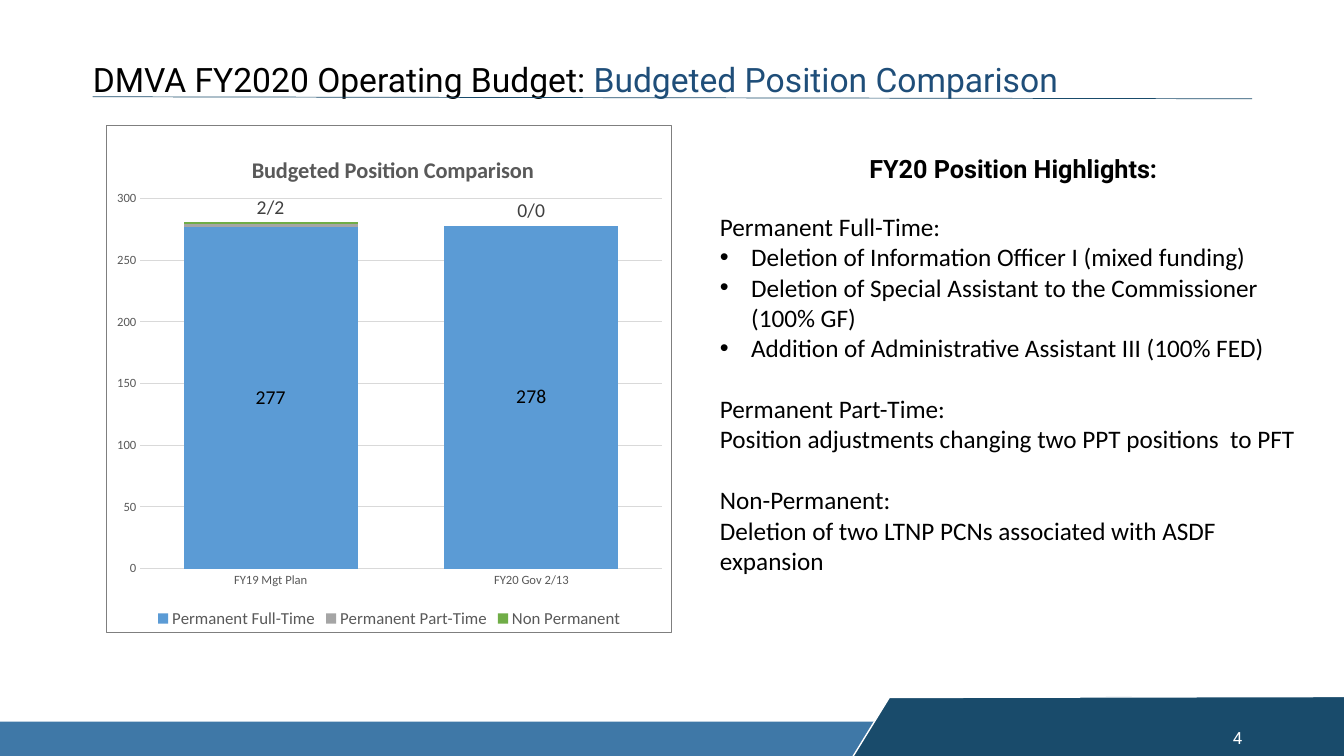
from lxml import etree
from pptx import Presentation
from pptx.chart.data import CategoryChartData
from pptx.dml.color import RGBColor
from pptx.enum.chart import XL_CHART_TYPE as ChartType, XL_LABEL_POSITION as LabelPosition
from pptx.enum.chart import XL_LEGEND_POSITION as LegendPosition, XL_TICK_MARK as TickMark
from pptx.enum.shapes import MSO_CONNECTOR as Connector, MSO_SHAPE as Shape
from pptx.enum.text import MSO_ANCHOR as Anchor, MSO_AUTO_SIZE as AutoSize, PP_ALIGN as Align
from pptx.oxml import parse_xml
from pptx.oxml.ns import nsdecls, qn
from pptx.util import Inches, Pt


def color(value):
    return RGBColor.from_string(value)


def manual_layout(inner=False, **sides):
    parts = '<c:layoutTarget val="inner"/>' if inner else ""
    if inner or "edge" in sides:
        parts += '<c:xMode val="edge"/><c:yMode val="edge"/>'
    sides.pop("edge", None)
    parts += "".join(f'<c:{side} val="{size}"/>' for side, size in sides.items())
    return parse_xml(f'<c:layout {nsdecls("c")}><c:manualLayout>{parts}</c:manualLayout></c:layout>')


def place(parent, layout, after):
    for old in parent.findall(qn("c:layout")):
        parent.remove(old)
    if after is None:
        parent.insert(0, layout)
    else:
        parent.find(qn(after)).addnext(layout)


class BudgetPage:
    heading_font = "Roboto"
    text_font = "Calibri"
    navy = "194B6B"
    blue = "3F78A7"
    accent = "1F4E79"
    gray = "595959"
    grid = "D9D9D9"
    border = "7F7F7F"

    def __init__(self, deck):
        self.page = deck.slides.add_slide(deck.slide_layouts[1])
        self.shapes = self.page.shapes

    def style(self, font, size, tone, name=None, bold=False):
        font.name = name or self.text_font
        font.size = Pt(size)
        font.bold = bold
        font.color.rgb = color(tone)

    def span(self, para, text, size, tone, name=None, bold=False):
        run = para.add_run()
        run.text = text
        self.style(run.font, size, tone, name, bold)

    def frame(self, box, left, top, width, height, inset=0.1):
        box.left, box.top = Inches(left), Inches(top)
        box.width, box.height = Inches(width), Inches(height)
        frame = box.text_frame
        frame.word_wrap = True
        frame.auto_size = AutoSize.NONE
        frame.vertical_anchor = Anchor.TOP
        frame.margin_left, frame.margin_right = Inches(inset), Inches(0.1)
        frame.margin_top = frame.margin_bottom = Inches(0.05)
        return frame

    def band(self, left, top, width, height):
        box = self.shapes.add_shape(Shape.RECTANGLE, Inches(left), Inches(top), Inches(width), Inches(height))
        box.shadow.inherit = False
        box.fill.solid()
        box.fill.fore_color.rgb = color(self.blue)
        box.line.fill.background()

    def corner(self, points):
        start, *rest = [(Inches(x), Inches(y)) for x, y in points]
        builder = self.shapes.build_freeform(*start)
        builder.add_line_segments(rest, close=True)
        box = builder.convert_to_shape()
        box.shadow.inherit = False
        box.fill.solid()
        box.fill.fore_color.rgb = color(self.navy)
        box.line.color.rgb = color("FFFFFF")
        box.line.width = Pt(1)

    def rule(self, *ends):
        line = self.shapes.add_connector(Connector.STRAIGHT, *[Inches(end) for end in ends])
        line.line.color.rgb = color(self.navy)
        line.line.width = Pt(0.5)
        etree.SubElement(line._element.spPr, qn("a:effectLst"))

    def title(self, *spans):
        para = self.frame(self.shapes.title, 0.92, 0.58, 11.5, 0.48, inset=0).paragraphs[0]
        para.alignment = Align.LEFT
        para.line_spacing = 0.9
        for text, tone in spans:
            self.span(para, text, 24, tone, self.heading_font)

    def number(self, text):
        box = self.shapes.add_textbox(0, 0, 0, 0)
        para = self.frame(box, 9.42, 7.17, 3, 0.33).paragraphs[0]
        para.alignment = Align.RIGHT
        self.span(para, text, 12, "FFFFFF", self.heading_font)

    def highlights(self, heading, sections):
        frame = self.frame(self.page.placeholders[1], 7.04, 1.47, 6.02, 4.58)
        para = frame.paragraphs[0]
        self.list_item(para, False, 0)
        para.alignment = Align.CENTER
        self.span(para, heading, 18, "000000", self.heading_font, True)
        for gap, label, lines, bulleted in sections:
            para = frame.add_paragraph()
            self.list_item(para, False, gap)
            self.span(para, label, 18, "000000")
            for text in lines:
                para = frame.add_paragraph()
                self.list_item(para, bulleted, 0)
                self.span(para, text, 18, "000000")

    def list_item(self, para, bulleted, gap):
        indent = Inches(0.31) if bulleted else 0
        props = para._p.get_or_add_pPr()
        props.set("marL", str(indent))
        props.set("indent", str(-indent))
        if bulleted:
            etree.SubElement(props, qn("a:buFont"), typeface="Arial")
            etree.SubElement(props, qn("a:buChar"), char="•")
        else:
            etree.SubElement(props, qn("a:buNone"))
        para.space_before = Pt(gap)
        para.space_after = Pt(0)
        para.alignment = Align.LEFT

    def chart(self, heading, categories, series, tags):
        data = CategoryChartData()
        data.categories = categories
        for name, values, tone in series:
            data.add_series(name, values)
        place_on_page = [Inches(side) for side in (1.05, 1.24, 5.62, 5.04)]
        chart = self.shapes.add_chart(ChartType.COLUMN_STACKED, *place_on_page, data).chart
        self.style(chart.font, 10, "000000")
        self.chart_frame(chart, heading)
        self.axes(chart)
        plot = chart.plots[0]
        plot.gap_width, plot.overlap = 50, 100
        plot.vary_by_categories = False
        for bars, (name, values, tone) in zip(plot.series, series):
            bars.format.fill.solid()
            bars.format.fill.fore_color.rgb = color(tone)
        labels = plot.series[0].data_labels
        labels.show_value = True
        labels.position = LabelPosition.CENTER
        self.style(labels.font, 14, "000000")
        top = plot.series[len(series) - 1]
        for index, text in enumerate(tags):
            label = top.points[index].data_label
            self.span(label.text_frame.paragraphs[0], text, 14, "404040")
            label.position = LabelPosition.CENTER
        for label in chart._chartSpace.iter(qn("c:dLbl")):
            place(label, manual_layout(x=0, y=-0.03), "c:idx")

    def chart_frame(self, chart, heading):
        chart.has_title = True
        self.span(chart.chart_title.text_frame.paragraphs[0], heading, 16, self.gray, bold=True)
        chart.has_legend = True
        chart.legend.position = LegendPosition.BOTTOM
        chart.legend.include_in_layout = False
        self.style(chart.legend.font, 12, self.gray)
        space = chart._chartSpace
        place(next(space.iter(qn("c:title"))), manual_layout(edge=True, x=0.25, y=0.05), "c:tx")
        area = next(space.iter(qn("c:plotArea")))
        place(area, manual_layout(True, x=0.06, y=0.144, w=0.922, h=0.73), None)
        space.find(qn("c:chart")).addnext(parse_xml(
            f'<c:spPr {nsdecls("c", "a")}><a:solidFill><a:srgbClr val="FFFFFF"/></a:solidFill>'
            f'<a:ln w="{Pt(0.75)}"><a:solidFill><a:srgbClr val="{self.border}"/></a:solidFill></a:ln></c:spPr>'))

    def axes(self, chart):
        for axis in (chart.category_axis, chart.value_axis):
            axis.major_tick_mark = axis.minor_tick_mark = TickMark.NONE
            self.style(axis.tick_labels.font, 9, self.gray)
        values = chart.value_axis
        values.minimum_scale, values.maximum_scale, values.major_unit = 0, 300, 50
        values.format.line.fill.background()
        values.has_major_gridlines = True
        for line in (chart.category_axis.format.line, values.major_gridlines.format.line):
            line.color.rgb = color(self.grid)
            line.width = Pt(0.75)


def main():
    deck = Presentation()
    deck.slide_width, deck.slide_height = Inches(13.33), Inches(7.5)
    page = BudgetPage(deck)
    page.band(0, 7.16, 13.33, 0.34)
    page.corner([(8.82, 6.92), (13.41, 6.91), (13.41, 7.57), (8.42, 7.57)])
    page.rule(0.92, 0.96, 12.42, 0.98)
    page.number("4")
    page.title(("DMVA FY2020 Operating Budget: ", "000000"), ("Budgeted Position Comparison", page.accent))
    page.chart("Budgeted Position Comparison", ["FY19 Mgt Plan", "FY20 Gov 2/13"], [
        ("Permanent Full-Time", (277, 278), "5B9BD5"),
        ("Permanent Part-Time", (2, 0), "A5A5A5"),
        ("Non Permanent", (2, 0), "70AD47"),
    ], ["2/2", "0/0"])
    page.highlights("FY20 Position Highlights:", [
        (20, "Permanent Full-Time:", [
            "Deletion of Information Officer I (mixed funding)",
            "Deletion of Special Assistant to the Commissioner (100% GF)",
            "Addition of Administrative Assistant III (100% FED)"], True),
        (22, "Permanent Part-Time:", ["Position adjustments changing two PPT positions  to PFT"], False),
        (22, "Non-Permanent:", ["Deletion of two LTNP PCNs associated with ASDF expansion"], False),
    ])
    deck.save("out.pptx")


if __name__ == "__main__":
    main()
